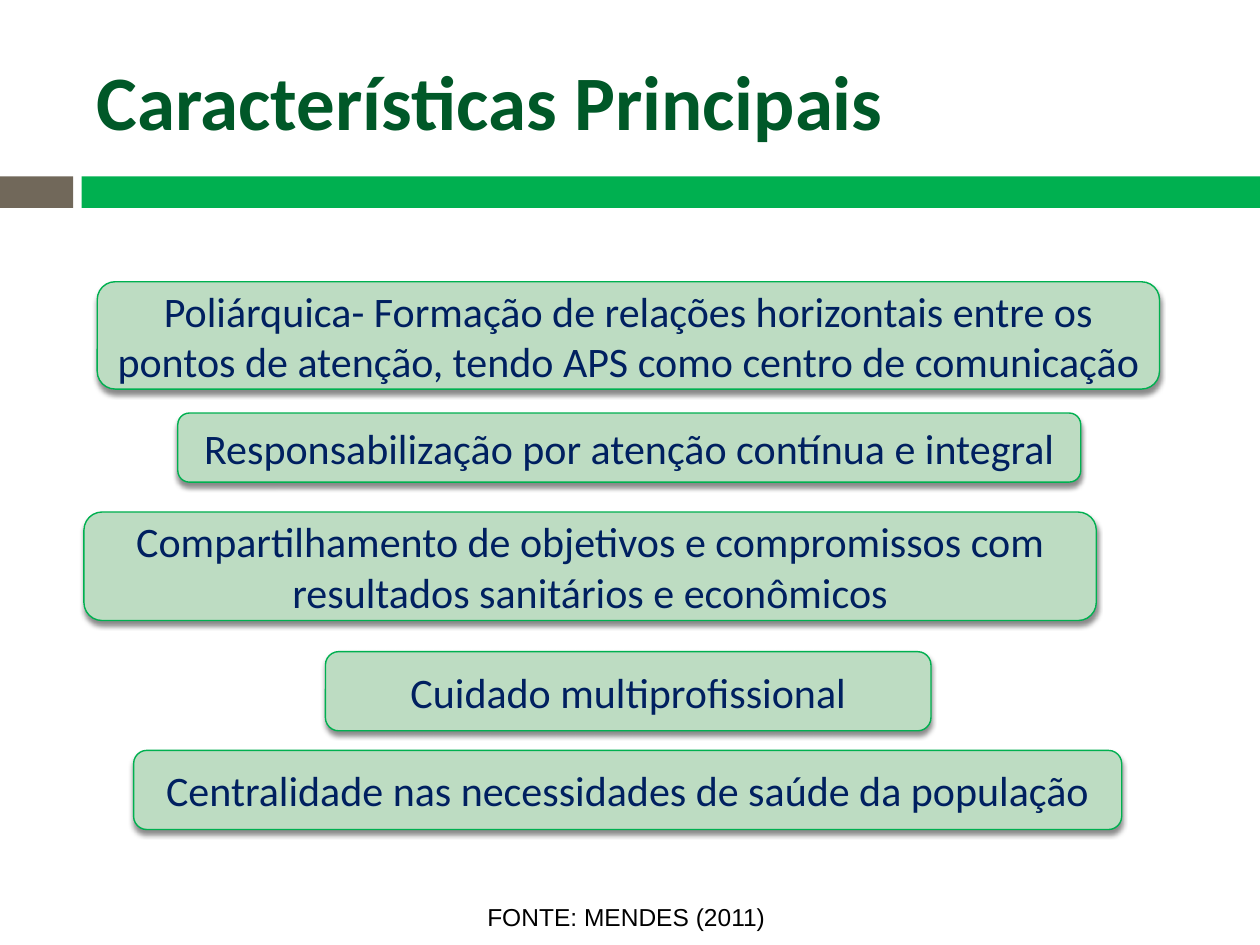
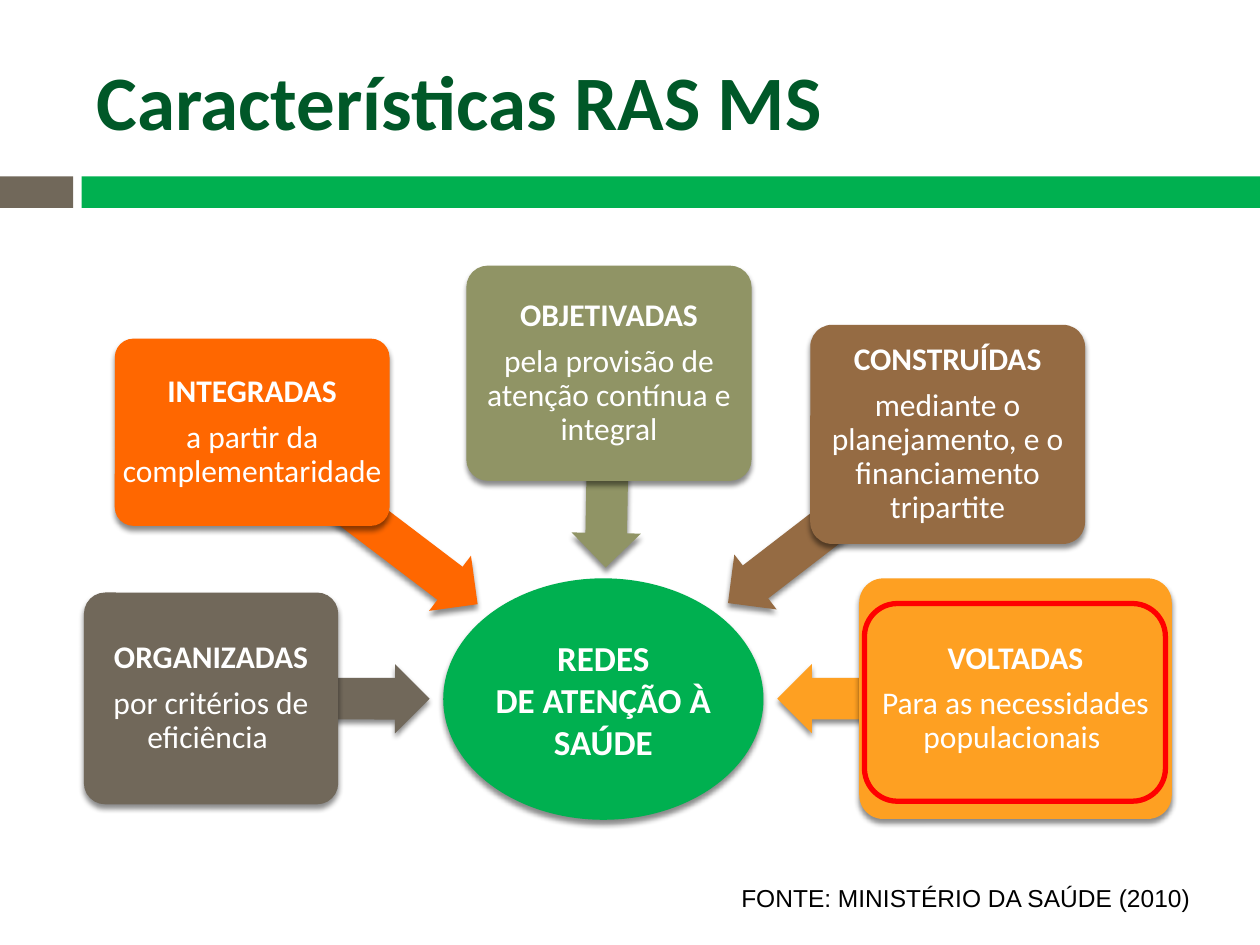
import pptx
import pptx.util
import pptx.dml.color
import pptx.enum.shapes
import pptx.enum.text
import pptx.oxml

Pt = pptx.util.Pt
RGBColor = pptx.dml.color.RGBColor
MSO_SHAPE = pptx.enum.shapes.MSO_SHAPE
PP_ALIGN = pptx.enum.text.PP_ALIGN
MSO_ANCHOR = pptx.enum.text.MSO_ANCHOR

TAUPE = RGBColor(0x71, 0x68, 0x5A)
GREEN = RGBColor(0x00, 0xB0, 0x50)
DARK_GREEN = RGBColor(0x00, 0x58, 0x28)
PALE_GREEN = RGBColor(0xBD, 0xDC, 0xC2)
NAVY = RGBColor(0x00, 0x20, 0x60)
ORANGE = RGBColor(0xFF, 0x67, 0x00)
OLIVE = RGBColor(0x90, 0x94, 0x65)
BROWN = RGBColor(0x95, 0x6B, 0x43)
AMBER = RGBColor(0xFE, 0xA0, 0x22)
RED = RGBColor(0xFF, 0x00, 0x00)
WHITE = RGBColor(0xFF, 0xFF, 0xFF)
BLACK = RGBColor(0x00, 0x00, 0x00)

SHADOW = (
    '<a:effectLst xmlns:a="http://schemas.openxmlformats.org/drawingml/2006/main">'
    '<a:outerShdw blurRad="38100" dist="30480" dir="5400000" rotWithShape="0">'
    '<a:srgbClr val="000000"><a:alpha val="45000"/></a:srgbClr>'
    '</a:outerShdw></a:effectLst>'
)


class Deck:
    font = "Calibri"

    def __init__(self):
        self.prs = pptx.Presentation()
        self.prs.slide_width = Pt(720)
        self.prs.slide_height = Pt(540)

    def slide(self, title):
        self.s = self.prs.slides.add_slide(self.prs.slide_layouts[6])
        self.shape(MSO_SHAPE.RECTANGLE, (0, 100.8, 41.8, 18), TAUPE)
        self.shape(MSO_SHAPE.RECTANGLE, (46.6, 100.8, 673.4, 18), GREEN)
        tf = self.text_box((48, 18, 642, 78))
        tf.vertical_anchor = MSO_ANCHOR.MIDDLE
        self.run(tf.paragraphs[0], title, 44, DARK_GREEN, True)

    def shape(self, kind, box, fill=None, line=None, weight=0.8, shadow=False, adj=None):
        sp = self.s.shapes.add_shape(kind, *map(Pt, box))
        sp.shadow.inherit = False
        if fill is None:
            sp.fill.background()
        else:
            sp.fill.solid()
            sp.fill.fore_color.rgb = fill
        if line is None:
            sp.line.fill.background()
        else:
            sp.line.color.rgb = line
            sp.line.width = Pt(weight)
        if shadow:
            effects = sp._element.spPr.find(pptx.oxml.ns.qn("a:effectLst"))
            effects.getparent().replace(effects, pptx.oxml.parse_xml(SHADOW))
        for i, value in enumerate(adj or ()):
            sp.adjustments[i] = value
        return sp

    def text_box(self, box):
        tf = self.s.shapes.add_textbox(*map(Pt, box)).text_frame
        tf.word_wrap = True
        return tf

    def run(self, p, text, size, color, bold=False, font=None):
        r = p.add_run()
        r.text = text
        r.font.name = font or self.font
        r.font.size = Pt(size)
        r.font.bold = bold
        r.font.color.rgb = color

    def fill_text(self, sp, lines, size, color, inset=None, spacing=None, after=None):
        tf = sp.text_frame
        tf.word_wrap = True
        tf.vertical_anchor = MSO_ANCHOR.MIDDLE
        if inset is not None:
            tf.margin_left = tf.margin_right = tf.margin_top = tf.margin_bottom = Pt(inset)
        for i, (text, bold) in enumerate(lines):
            p = tf.add_paragraph() if i else tf.paragraphs[0]
            p.alignment = PP_ALIGN.CENTER
            p.line_spacing = spacing
            if after is not None:
                p.space_after = Pt(after)
            self.run(p, text, size, color, bold)

    def bar(self, box, text):
        sp = self.shape(MSO_SHAPE.ROUNDED_RECTANGLE, box, PALE_GREEN, GREEN, shadow=True)
        self.fill_text(sp, [(text, False)], 24, NAVY)

    def arrow(self, box, angle, color):
        sp = self.shape(MSO_SHAPE.LEFT_ARROW, box, color, shadow=True, adj=(0.6, 0.5))
        sp.rotation = angle

    def card(self, box, color, heading, text):
        sp = self.shape(MSO_SHAPE.ROUNDED_RECTANGLE, box, color, shadow=True, adj=(0.1,))
        self.fill_text(sp, [(heading, True), (text, False)], 18, WHITE, 0, 0.9, 6.5)

    def hub(self, box, lines):
        sp = self.shape(MSO_SHAPE.OVAL, box, GREEN, shadow=True)
        self.fill_text(sp, [(text, True) for text in lines], 20, WHITE, 0)

    def source(self, box, text):
        tf = self.text_box(box)
        self.run(tf.paragraphs[0], text, 14, BLACK, font="Arial")


def main_features(deck):
    deck.slide("Características Principais")
    for box, text in (
        ((55.6, 161, 607, 61.3), "Poliárquica- Formação de relações horizontais entre os "
         "pontos de atenção, tendo APS como centro de comunicação"),
        ((101.6, 236, 516, 39.5), "Responsabilização por atenção contínua e integral"),
        ((48, 292.6, 578.5, 62), "Compartilhamento de objetivos e compromissos com "
         "resultados sanitários e econômicos"),
        ((186, 372.4, 346, 45.2), "Cuidado multiprofissional"),
        ((76.4, 428.8, 564.6, 45.2), "Centralidade nas necessidades de saúde da população"),
    ):
        deck.bar(box, text)
    deck.source((271.4, 512, 175.7, 24.2), "FONTE: MENDES (2011)")


def network_features(deck):
    deck.slide("Características RAS MS")
    deck.source((416.5, 501, 272.5, 24), "FONTE: MINISTÉRIO DA SAÚDE (2010)")
    deck.hub((253.3, 330.5, 183, 138), ("REDES", "DE ATENÇÃO À SAÚDE"))
    for color, arrow, angle, card, heading, text in (
        (TAUPE, (120.2, 379.4, 125.3), 180.1, (48, 338.6, 145.3, 121),
         "ORGANIZADAS", "por critérios de eficiência "),
        (ORANGE, (127.4, 276.5, 162), 217.2, (65.6, 193.5, 157, 107),
         "INTEGRADAS", "a partir da complementaridade "),
        (OLIVE, (291.6, 249.1, 110.9), 271, (266.5, 151.8, 163, 123),
         "OBJETIVADAS", "pela provisão de atenção contínua e integral"),
        (BROWN, (399.6, 276.5, 158.4), 322.4, (463, 185.6, 157, 125.2),
         "CONSTRUÍDAS", "mediante o planejamento, e o financiamento tripartite"),
        (AMBER, (444.2, 379.4, 136), 0, (491, 330.5, 178.6, 137.5),
         "VOLTADAS", "Para as necessidades populacionais "),
    ):
        deck.arrow((*arrow, 39.6), angle, color)
        deck.card(card, color, heading, text)
    deck.shape(MSO_SHAPE.ROUNDED_RECTANGLE, (494, 344.9, 172, 113), line=RED, weight=3)


def main():
    deck = Deck()
    main_features(deck)
    network_features(deck)
    deck.prs.save("out.pptx")


if __name__ == "__main__":
    main()
